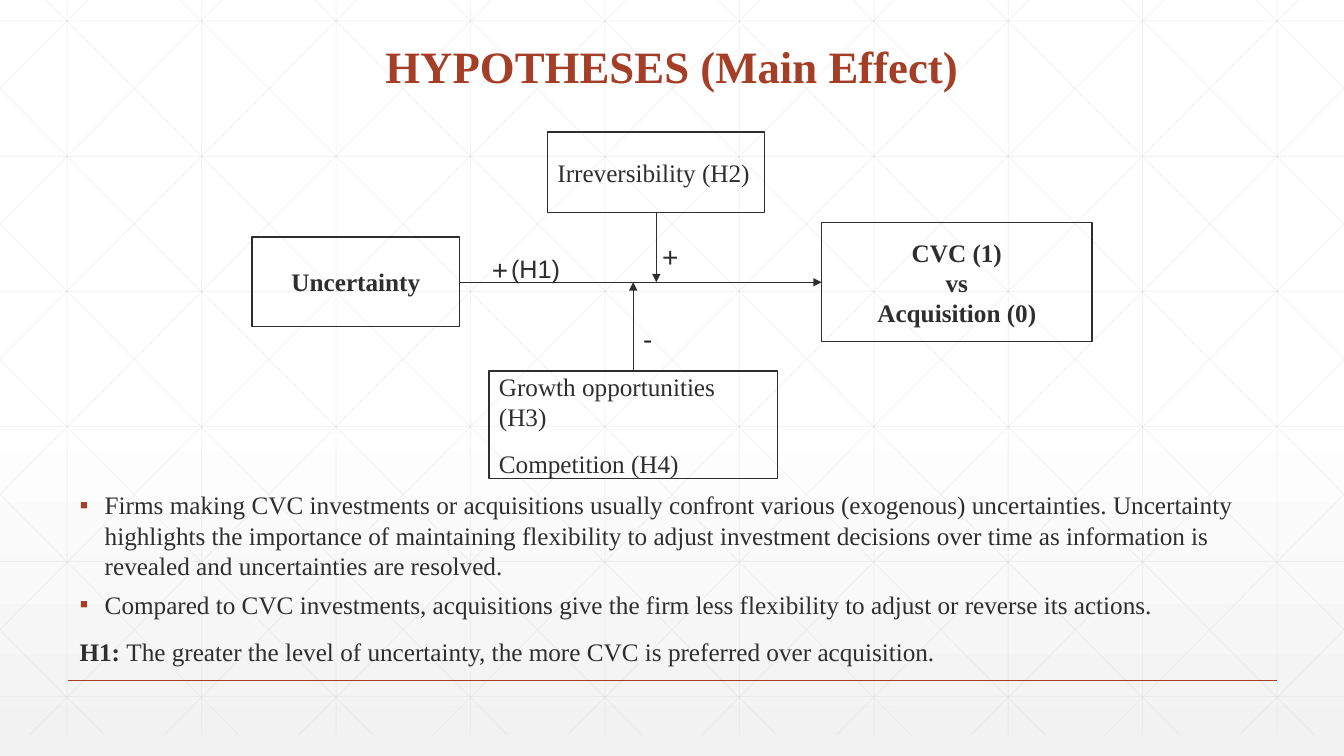
from pptx import Presentation
from pptx import util as u
from pptx.dml.color import RGBColor
from pptx.enum import shapes, text
from pptx.oxml.ns import qn
from lxml import etree

WIDTH, HEIGHT = 13.33, 7.5
INK, RUST, MESH = "2D2E2D", "A43E27", "D8D8D8"
SERIF, SANS = "Times New Roman", "Arial"
CENTER = text.PP_ALIGN.CENTER
MIDDLE = text.MSO_ANCHOR.MIDDLE
MESH_TOP, MESH_BOTTOM, MESH_STEP = -0.21, 7.29, 4 / 3


def rgb(value):
    return RGBColor.from_string(value)


def add_line(slide, start, end, color=INK, width=0.75, alpha=None, arrow=False):
    line = slide.shapes.add_connector(
        shapes.MSO_CONNECTOR.STRAIGHT, *(u.Inches(v) for v in (*start, *end)))
    line.line.color.rgb = rgb(color)
    line.line.width = u.Pt(width)
    properties = line._element.spPr
    etree.SubElement(properties, qn("a:effectLst"))
    if alpha is not None:
        tint = properties.find(".//" + qn("a:srgbClr"))
        etree.SubElement(tint, qn("a:alpha"), val=str(alpha * 1000))
    if arrow:
        etree.SubElement(properties.find(qn("a:ln")), qn("a:tailEnd"), type="triangle")


def write(paragraph, words, size=18, font=SERIF, color=INK, bold=False):
    run = paragraph.add_run()
    run.text = words
    run.font.size = u.Pt(size)
    run.font.name = font
    run.font.color.rgb = rgb(color)
    run.font.bold = bold


def fill_frame(frame, lines, align=None, anchor=None, line_spacing=None,
               space_before=0, **font):
    """Write one paragraph per line; space_before goes between them."""
    frame.word_wrap = True
    frame.vertical_anchor = anchor
    for index, words in enumerate(lines):
        paragraph = frame.paragraphs[0] if index == 0 else frame.add_paragraph()
        paragraph.alignment = align
        paragraph.line_spacing = line_spacing
        paragraph.space_before = u.Pt(space_before if index else 0)
        write(paragraph, words, **font)


def add_text(slide, box, lines, **form):
    frame = slide.shapes.add_textbox(*(u.Inches(v) for v in box)).text_frame
    fill_frame(frame, lines, **form)
    return frame


def add_box(slide, box, lines, align=text.PP_ALIGN.LEFT, **form):
    concept = slide.shapes.add_shape(
        shapes.MSO_SHAPE.RECTANGLE, *(u.Inches(v) for v in box))
    concept.shadow.inherit = False
    concept.fill.background()
    concept.line.color.rgb = rgb(INK)
    concept.line.width = u.Pt(1)
    fill_frame(concept.text_frame, lines, align=align, anchor=MIDDLE, **form)


def indent(paragraph, left, hanging, bullet=None):
    properties = paragraph._p.get_or_add_pPr()
    properties.set("marL", str(u.Inches(left)))
    properties.set("indent", str(-u.Inches(hanging)))
    if bullet:
        color = etree.SubElement(properties, qn("a:buClr"))
        etree.SubElement(color, qn("a:srgbClr"), val=RUST)
        etree.SubElement(properties, qn("a:buFont"), typeface=SANS)
        etree.SubElement(properties, qn("a:buChar"), char=bullet)


def draw_background(slide):
    fill = slide.background.fill
    fill.gradient()
    fill.gradient_angle = 270
    for stop, color, position in zip(fill.gradient_stops, ("FFFFFF", "F2F2F2"), (0.53, 1)):
        stop.color.rgb = rgb(color)
        stop.position = position


def draw_mesh(slide):
    """Square grid with both diagonals, clipped at the slide's sides."""
    pale = {"color": MESH, "alpha": 25}
    for column in range(10):
        x = (column + 0.5) * MESH_STEP
        add_line(slide, (x, MESH_TOP), (x, MESH_BOTTOM), **pale)
    for row in range(6):
        y = 0.21 + 1.34 * row
        add_line(slide, (0, y), (WIDTH, y), **pale)
    run = 7.45
    slope = (MESH_BOTTOM - MESH_TOP) / run
    for diagonal in range(-5, 10):
        origin = 0.25 + diagonal * MESH_STEP
        left, right = max(origin, 0), min(origin + run, WIDTH)
        top, bottom = (MESH_TOP + (x - origin) * slope for x in (left, right))
        add_line(slide, (left, top), (right, bottom), **pale)
        add_line(slide, (WIDTH - left, top), (WIDTH - right, bottom), **pale)


def draw_model(slide, left, top):
    """Path diagram of the main effect and its moderators."""
    def at(x, y, *size):
        return (left + x, top + y, *size)

    axis = 1.49
    add_box(slide, at(0, 1.04, 2.06, 0.89), ["Uncertainty"], align=CENTER, bold=True)
    add_box(slide, at(5.65, 0.9, 2.68, 1.18), ["CVC (1)", "vs", "Acquisition (0)"],
            align=CENTER, bold=True)
    add_box(slide, at(2.35, 2.37, 2.86, 1.07),
            ["Growth opportunities (H3)", "Competition (H4)"], space_before=12)
    add_box(slide, at(2.93, 0, 2.15, 0.8), ["Irreversibility (H2)"])
    for start, end in (((2.06, axis), (5.65, axis)),
                       ((3.78, 2.37), (3.78, axis)),
                       ((4.01, 0.8), (4.01, axis))):
        add_line(slide, at(*start), at(*end), arrow=True)
    for sign, x, y in (("+", 3.97, 1.02), ("-", 3.78, 1.83), ("+", 2.28, 1.15)):
        add_text(slide, at(x, y, 0.56, 0.39), [sign], size=20, font=SANS)
    add_text(slide, at(2.47, 1.15, 0.78, 0.4), ["(H1)"], font=SANS)


def draw_argument(slide, box):
    points = [
        "Firms making CVC investments or acquisitions usually confront various "
        "(exogenous) uncertainties. Uncertainty highlights the importance of "
        "maintaining flexibility to adjust investment decisions over time as "
        "information is revealed and uncertainties are resolved.",
        "Compared to CVC investments, acquisitions give the firm less flexibility "
        "to adjust or reverse its actions.",
    ]
    frame = add_text(slide, box, points, space_before=6)
    for paragraph in frame.paragraphs:
        indent(paragraph, 0.25, 0.25, bullet="▪")
    hypothesis = frame.add_paragraph()
    hypothesis.space_before = u.Pt(12)
    indent(hypothesis, 0.5, 0.5)
    write(hypothesis, "H1: ", bold=True)
    write(hypothesis, "The greater the level of uncertainty, the more CVC is "
                      "preferred over acquisition.")


def main():
    deck = Presentation()
    deck.slide_width, deck.slide_height = u.Inches(WIDTH), u.Inches(HEIGHT)
    slide = deck.slides.add_slide(deck.slide_layouts[6])
    draw_background(slide)
    draw_mesh(slide)
    add_line(slide, (0.67, 6.75), (12.67, 6.75), color=RUST, width=1)
    add_text(slide, (0, 0, WIDTH, 0.97), ["HYPOTHESES (Main Effect)"], align=CENTER,
             anchor=text.MSO_ANCHOR.BOTTOM, line_spacing=0.9, size=32, color=RUST, bold=True)
    draw_argument(slide, (0.69, 4.81, 11.95, 1.99))
    draw_model(slide, 2.5, 1.31)
    deck.save("out.pptx")


if __name__ == "__main__":
    main()
